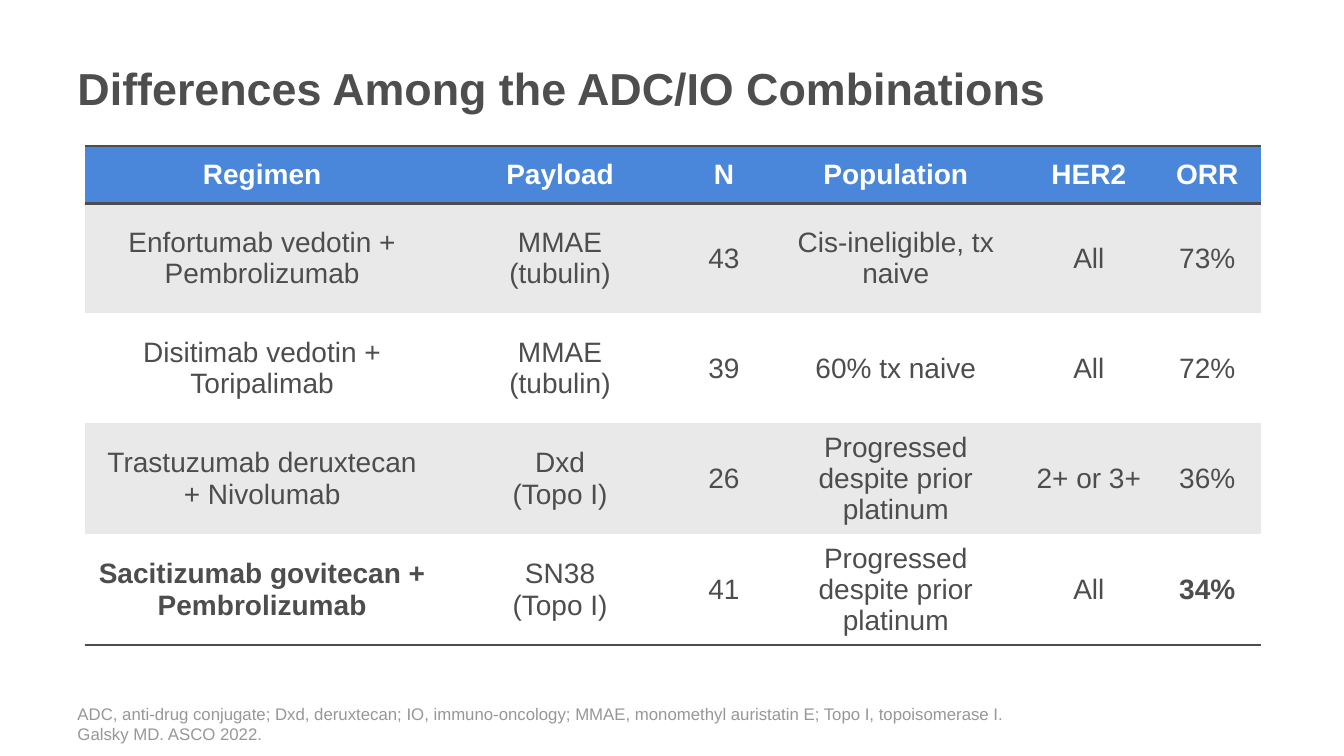
from lxml import etree
from pptx import Presentation
from pptx.dml.color import RGBColor
from pptx.enum.text import MSO_ANCHOR, PP_ALIGN
from pptx.oxml.ns import qn
from pptx.util import Inches, Pt

TITLE = "Differences Among the ADC/IO Combinations"
FOOTNOTE = (
    "ADC, anti-drug conjugate; Dxd, deruxtecan; IO, immuno-oncology; "
    "MMAE, monomethyl auristatin E; Topo I, topoisomerase I.\n"
    "Galsky MD. ASCO 2022."
)
HEADER = ("Regimen", "Payload", "N", "Population", "HER2", "ORR")
REGIMENS = [
    ("Enfortumab vedotin +\nPembrolizumab", "MMAE\n(tubulin)", "43",
     "Cis-ineligible, tx\nnaive", "All", "73%"),
    ("Disitimab vedotin +\nToripalimab", "MMAE\n(tubulin)", "39",
     "60% tx naive", "All", "72%"),
    ("Trastuzumab deruxtecan\n+ Nivolumab", "Dxd\n(Topo I)", "26",
     "Progressed\ndespite prior\nplatinum", "2+ or 3+", "36%"),
    ("Sacitizumab govitecan +\nPembrolizumab", "SN38\n(Topo I)", "41",
     "Progressed\ndespite prior\nplatinum", "All", "34%"),
]
ROWS = [HEADER] + REGIMENS
LAST_ROW = len(ROWS) - 1
BOLD_CELLS = {(LAST_ROW, 0), (LAST_ROW, len(HEADER) - 1)}

COLUMN_WIDTHS = (3.52, 2.39, 0.86, 2.55, 1.28, 1.07)
HEADER_HEIGHT, REGIMEN_HEIGHT = 0.57, 1.09
TABLE_LEFT, TABLE_TOP = 0.84, 1.45
TEXT_LEFT, TEXT_WIDTH = 0.67, 11.75

FONT = "Arial"
DARK = RGBColor(0x4D, 0x4D, 0x4D)
TITLE_GRAY = RGBColor(0x4D, 0x4E, 0x4D)
NOTE_GRAY = RGBColor(0x97, 0x97, 0x97)
BLUE = RGBColor(0x4A, 0x86, 0xD9)
BAND = RGBColor(0xE9, 0xE9, 0xE9)
WHITE = RGBColor(0xFF, 0xFF, 0xFF)
MIDDLE, BOTTOM = MSO_ANCHOR.MIDDLE, MSO_ANCHOR.BOTTOM
LEFT, CENTER = PP_ALIGN.LEFT, PP_ALIGN.CENTER


def write(frame, text, size, color, bold=False, align=LEFT):
    frame.text = text
    for paragraph in frame.paragraphs:
        paragraph.alignment = align
        for span in paragraph.runs:
            span.font.name = FONT
            span.font.size = Pt(size)
            span.font.bold = bold
            span.font.color.rgb = color


def add_text(page, text, top, height, anchor, size, color, bold=False):
    box = page.shapes.add_textbox(
        Inches(TEXT_LEFT), Inches(top), Inches(TEXT_WIDTH), Inches(height))
    box.text_frame.word_wrap = True
    box.text_frame.vertical_anchor = anchor
    write(box.text_frame, text, size, color, bold)


def set_borders(cell, ruled_sides):
    """Rule the named sides and clear the others; call before filling the cell."""
    properties = cell._tc.get_or_add_tcPr()
    for side in ("lnL", "lnR", "lnT", "lnB"):
        line = etree.SubElement(properties, qn("a:" + side), w=str(Pt(2)))
        if side in ruled_sides:
            fill = etree.SubElement(line, qn("a:solidFill"))
            etree.SubElement(fill, qn("a:srgbClr"), val=str(DARK))
        else:
            etree.SubElement(line, qn("a:noFill"))


def ruled_sides(row):
    if row == 0:
        return ("lnT", "lnB")
    if row == 1:
        return ("lnT",)
    return ("lnB",) if row == LAST_ROW else ()


def add_regimen_table(page):
    height = HEADER_HEIGHT + REGIMEN_HEIGHT * len(REGIMENS)
    table = page.shapes.add_table(
        len(ROWS), len(HEADER), Inches(TABLE_LEFT), Inches(TABLE_TOP),
        Inches(sum(COLUMN_WIDTHS)), Inches(height)).table
    table.first_row = True
    table.horz_banding = False
    for column, width in zip(table.columns, COLUMN_WIDTHS):
        column.width = Inches(width)
    for r, values in enumerate(ROWS):
        is_header = r == 0
        table.rows[r].height = Inches(HEADER_HEIGHT if is_header else REGIMEN_HEIGHT)
        background = BLUE if is_header else BAND if r % 2 else WHITE
        for c, value in enumerate(values):
            cell = table.cell(r, c)
            set_borders(cell, ruled_sides(r))
            cell.fill.solid()
            cell.fill.fore_color.rgb = background
            cell.vertical_anchor = MIDDLE
            write(cell.text_frame, value, 20, WHITE if is_header else DARK,
                  is_header or (r, c) in BOLD_CELLS, CENTER)


def main():
    deck = Presentation()
    deck.slide_width, deck.slide_height = Inches(13.33), Inches(7.5)
    page = deck.slides.add_slide(deck.slide_layouts[6])
    add_text(page, FOOTNOTE, 6.95, 0.48, BOTTOM, 12, NOTE_GRAY)
    add_text(page, TITLE, 0.22, 1.3, MIDDLE, 32, TITLE_GRAY, bold=True)
    add_regimen_table(page)
    deck.save("out.pptx")


if __name__ == "__main__":
    main()
